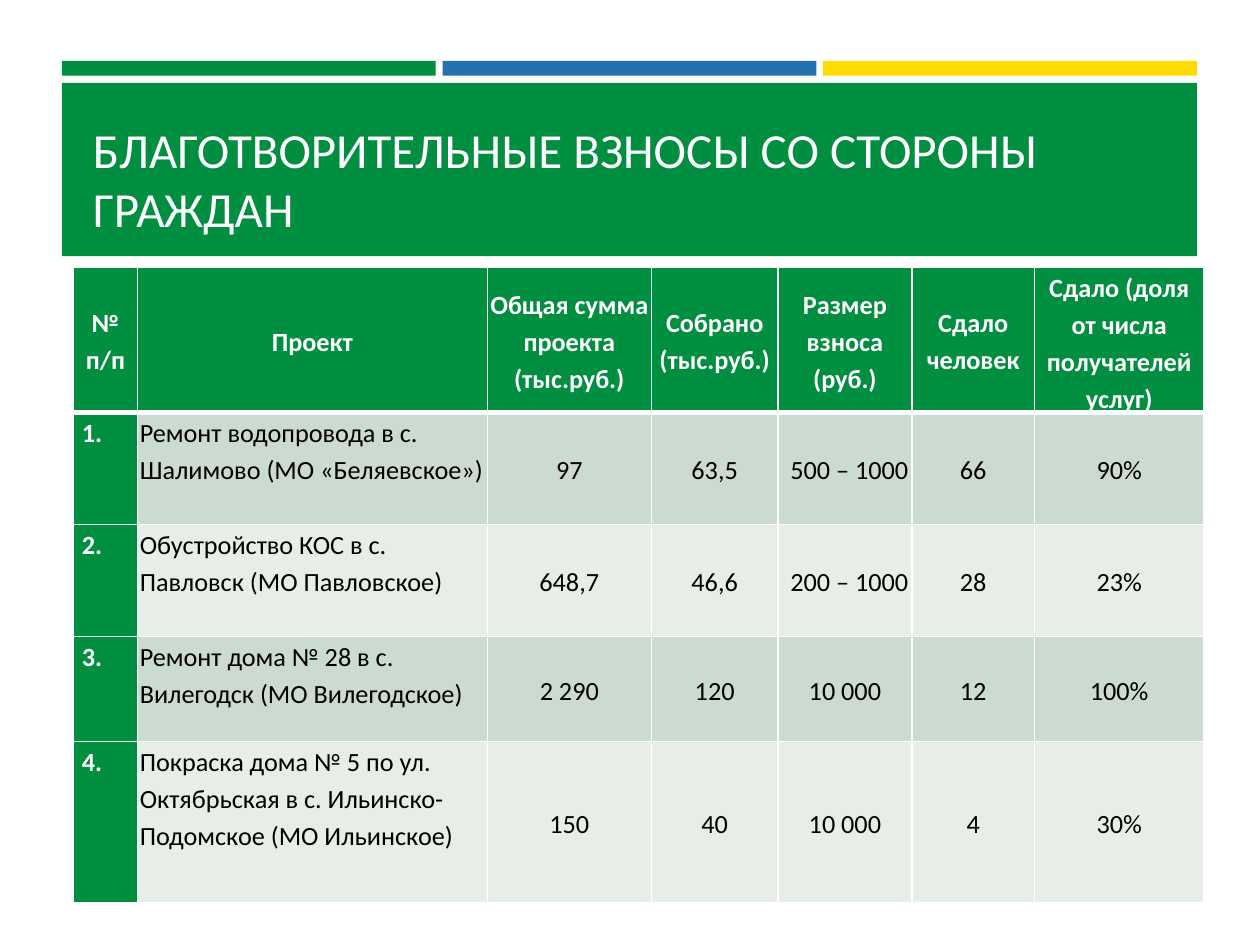
import pptx
import pptx.util
import pptx.dml.color
import pptx.enum.shapes
import pptx.enum.text
import lxml.etree

Pt = pptx.util.Pt
ALIGN = pptx.enum.text.PP_ALIGN
ANCHOR = pptx.enum.text.MSO_ANCHOR

TITLE = "БЛАГОТВОРИТЕЛЬНЫЕ ВЗНОСЫ СО СТОРОНЫ ГРАЖДАН"
HEADERS = ["№ п/п", "Проект", "Общая сумма проекта (тыс.руб.)", "Собрано (тыс.руб.)",
           "Размер взноса (руб.)", "Сдало человек", "Сдало (доля от числа получателей услуг)"]
PROJECTS = [
    ["1.", "Ремонт водопровода в с. Шалимово (МО «Беляевское»)", "97", "63,5", "500 – 1000", "66", "90%"],
    ["2.", "Обустройство КОС в с. Павловск (МО Павловское)", "648,7", "46,6", "200 – 1000", "28", "23%"],
    ["3.", "Ремонт дома № 28 в с. Вилегодск (МО Вилегодское)", "2 290", "120", "10 000", "12", "100%"],
    ["4.", "Покраска дома № 5 по ул. Октябрьская в с. Ильинско-Подомское (МО Ильинское)",
     "150", "40", "10 000", "4", "30%"],
]
COLUMN_WIDTHS = [36.5, 200, 93.7, 72.5, 76.4, 70.2, 96.7]
ROW_HEIGHTS = [75.6, 64.1, 64.1, 60, 92.2]
NUMBER, PROJECT, FEE = 0, 1, 4

THEME = {
    "green": "008E40", "blue": "2172AF", "yellow": "FFDB01",
    "white": "FFFFFF", "black": "000000", "bands": ["CCDBCF", "E7EEE8"],
    "font": "Calibri", "title_size": 28, "table_size": 15,
}
LEFT, WIDTH = 35.4, 648.6
STRIPE_TOP, STRIPE_HEIGHT, STRIPE_GAP = 34.8, 8.4, 3.9


def rgb(value):
    return pptx.dml.color.RGBColor.from_string(value)


def apply(target, values):
    for key, value in values.items():
        setattr(target, key, value)


def add_block(slide, left, top, width, height, color):
    block = slide.shapes.add_shape(pptx.enum.shapes.MSO_SHAPE.RECTANGLE,
                                   Pt(left), Pt(top), Pt(width), Pt(height))
    block.shadow.inherit = False
    block.fill.solid()
    block.fill.fore_color.rgb = rgb(color)
    block.line.fill.background()


def write(paragraph, text, size, color, bold=False):
    run = paragraph.add_run()
    run.text = text
    apply(run.font, {"name": THEME["font"], "size": Pt(size), "bold": bold})
    run.font.color.rgb = rgb(color)


def add_border(cell, side, width):
    ns = "{http://schemas.openxmlformats.org/drawingml/2006/main}"
    line = lxml.etree.SubElement(cell._tc.get_or_add_tcPr(), f"{ns}ln{side}", w=str(Pt(width)))
    fill = lxml.etree.SubElement(line, f"{ns}solidFill")
    lxml.etree.SubElement(fill, f"{ns}srgbClr", val=THEME["white"])


def fill_cell(cell, row, column, text):
    header = row == 0
    strong = header or column == NUMBER
    centred = header or column > PROJECT
    for side in "LRTB":
        heavy = (row, side) in [(0, "B"), (1, "T")]
        add_border(cell, side, 3 if heavy else 1)
    cell.fill.solid()
    cell.fill.fore_color.rgb = rgb(THEME["green"] if strong else THEME["bands"][(row - 1) % 2])
    apply(cell, {
        "margin_left": Pt(1.4), "margin_right": Pt(1.4), "margin_top": 0, "margin_bottom": 0,
        "vertical_anchor": ANCHOR.MIDDLE if centred else ANCHOR.TOP,
    })
    paragraph = cell.text_frame.paragraphs[0]
    apply(paragraph, {"alignment": ALIGN.CENTER if centred else ALIGN.LEFT, "line_spacing": 1.15})
    indent = 0
    if not header and column == NUMBER:
        indent = 3.4
    elif "–" in text and column == FEE:
        indent = 5
    if indent:
        paragraph._p.get_or_add_pPr().set("indent", str(Pt(indent)))
    write(paragraph, text, THEME["table_size"], THEME["white" if strong else "black"], strong)


def add_title(slide):
    add_block(slide, LEFT, 47.4, WIDTH, 99, THEME["green"])
    title = slide.shapes.add_textbox(Pt(46), Pt(54), Pt(629.3), Pt(85)).text_frame
    apply(title, {"word_wrap": True, "vertical_anchor": ANCHOR.BOTTOM})
    write(title.paragraphs[0], TITLE, THEME["title_size"], THEME["white"])


def add_contributions(slide):
    rows = [HEADERS] + PROJECTS
    table = slide.shapes.add_table(len(rows), len(HEADERS), Pt(42), Pt(152.8),
                                   Pt(sum(COLUMN_WIDTHS)), Pt(sum(ROW_HEIGHTS))).table
    for column, width in zip(table.columns, COLUMN_WIDTHS):
        column.width = Pt(width)
    for row, height in zip(table.rows, ROW_HEIGHTS):
        row.height = Pt(height)
    for row, texts in enumerate(rows):
        for column, text in enumerate(texts):
            fill_cell(table.cell(row, column), row, column, text)


def main():
    deck = pptx.Presentation()
    apply(deck, {"slide_width": Pt(720), "slide_height": Pt(540)})
    slide = deck.slides.add_slide(deck.slide_layouts[6])
    stripes = ["green", "blue", "yellow"]
    stripe_width = (WIDTH - STRIPE_GAP * (len(stripes) - 1)) / len(stripes)
    for index, color in enumerate(stripes):
        add_block(slide, LEFT + index * (stripe_width + STRIPE_GAP), STRIPE_TOP,
                  stripe_width, STRIPE_HEIGHT, THEME[color])
    add_title(slide)
    add_contributions(slide)
    deck.save("out.pptx")


if __name__ == "__main__":
    main()
